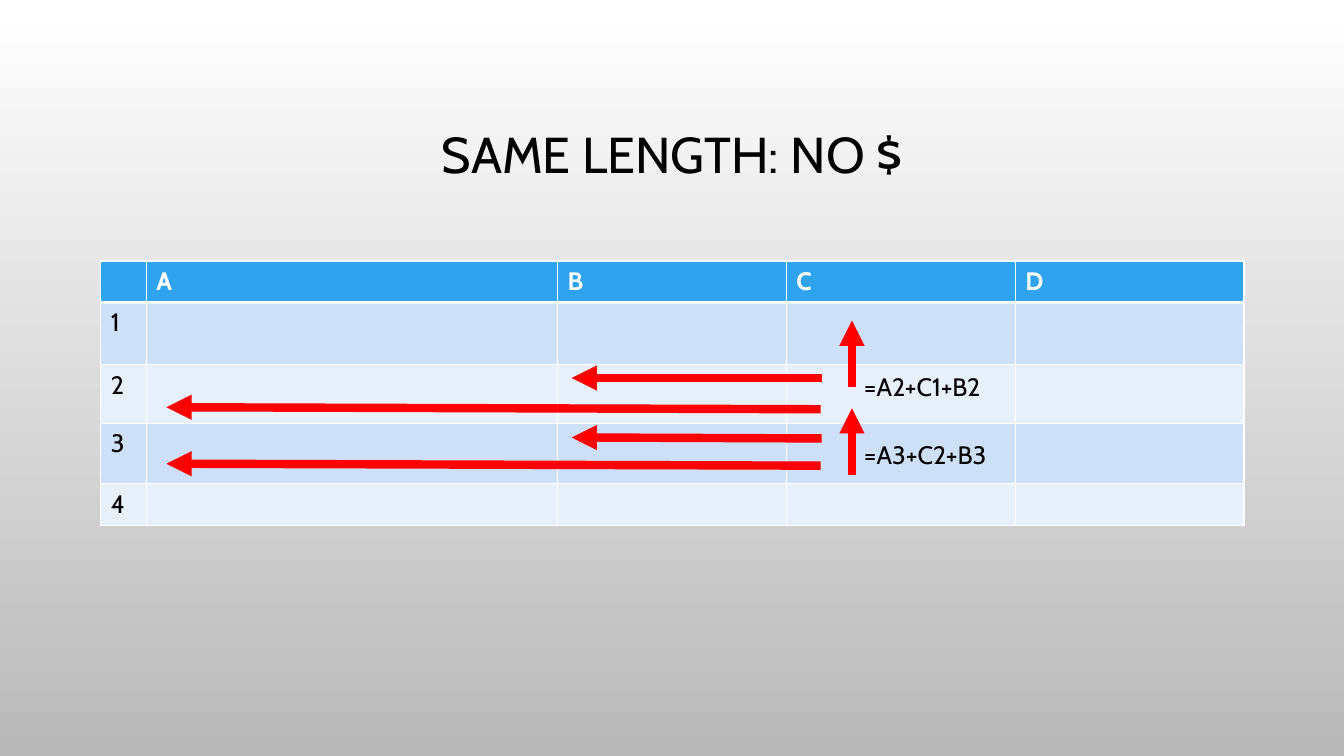
from lxml.etree import SubElement
from pptx import Presentation
from pptx.dml.color import RGBColor
from pptx.enum.shapes import MSO_CONNECTOR
from pptx.enum.text import MSO_ANCHOR, MSO_AUTO_SIZE, PP_ALIGN
from pptx.oxml import parse_xml
from pptx.oxml.ns import nsdecls, qn
from pptx.util import Inches, Pt


def color(value):
    return RGBColor.from_string(value)


def write(paragraph, text, size=18, ink="000000", bold=False):
    paragraph.text = text
    font = paragraph.font
    for name, value in {"name": "Cabin", "size": Pt(size), "bold": bold}.items():
        setattr(font, name, value)
    font.color.rgb = color(ink)


presentation = Presentation()
presentation.slide_width = Inches(13.33)
presentation.slide_height = Inches(7.5)
slide = presentation.slides.add_slide(presentation.slide_layouts[6])

background = slide.background.fill
background.gradient()
background.gradient_angle = 270
for stop, value, position in zip(background.gradient_stops, ("FFFFFF", "B9B9B9"), (0, 1)):
    stop.color.rgb = color(value)
    stop.position = position

title = slide.shapes.add_textbox(Inches(1), Inches(0.68), Inches(11.33), Inches(1.75))
title.text_frame.word_wrap = True
title.text_frame.vertical_anchor = MSO_ANCHOR.MIDDLE
heading = title.text_frame.paragraphs[0]
heading.alignment = PP_ALIGN.CENTER
heading.line_spacing = 0.9
write(heading, "SAME LENGTH: NO $", 36)

column_widths = [0.45, 4.08, 2.27, 2.27, 2.27]
row_heights = [0.41, 0.62, 0.58, 0.6, 0.41]
table = slide.shapes.add_table(
    5, 5, Inches(1), Inches(2.59), Inches(11.33), Inches(2.62)
).table
for column, width in zip(table.columns, column_widths):
    column.width = Inches(width)
for row, height in zip(table.rows, row_heights):
    row.height = Inches(height)

row_fills = ["2FA3EE", "CDE0F8", "E8F0FC", "CDE0F8", "E8F0FC"]
for row_index, row_fill in enumerate(row_fills):
    for column_index, letter in enumerate(["", "A", "B", "C", "D"]):
        cell = table.cell(row_index, column_index)
        borders = {"L": 1, "R": 1, "T": 3 if row_index == 1 else 1, "B": 3 if row_index == 0 else 1}
        properties = cell._tc.get_or_add_tcPr()
        for side, width in borders.items():
            properties.append(parse_xml(
                f'<a:ln{side} {nsdecls("a")} w="{Pt(width)}"><a:solidFill>'
                f'<a:srgbClr val="FFFFFF"/></a:solidFill></a:ln{side}>'
            ))
        cell.fill.solid()
        cell.fill.fore_color.rgb = color(row_fill)
        paragraph = cell.text_frame.paragraphs[0]
        if row_index == 0:
            write(paragraph, letter, ink="FFFFFF", bold=True)
        else:
            write(paragraph, str(row_index) if column_index == 0 else "")

for formula, top in [("=A2+C1+B2", 3.63), ("=A3+C2+B3", 4.31)]:
    label = slide.shapes.add_textbox(Inches(8.47), Inches(top), Inches(1.55), Inches(0.4))
    label.text_frame.word_wrap = False
    label.text_frame.auto_size = MSO_AUTO_SIZE.SHAPE_TO_FIT_TEXT
    write(label.text_frame.paragraphs[0], formula)

reference_arrows = [
    (8.45, 3.84, 8.45, 3.18),
    (8.15, 3.75, 5.67, 3.75),
    (8.14, 4.06, 1.65, 4.04),
    (8.15, 4.35, 5.67, 4.34),
    (8.14, 4.62, 1.65, 4.6),
    (8.45, 4.71, 8.45, 4.05),
]
for ends in reference_arrows:
    arrow = slide.shapes.add_connector(MSO_CONNECTOR.STRAIGHT, *map(Inches, ends))
    arrow.line.color.rgb = color("FF0000")
    arrow.line.width = Pt(6)
    SubElement(arrow.line._get_or_add_ln(), qn("a:tailEnd"), type="triangle")
    SubElement(arrow._element.spPr, qn("a:effectLst"))

presentation.save("out.pptx")
